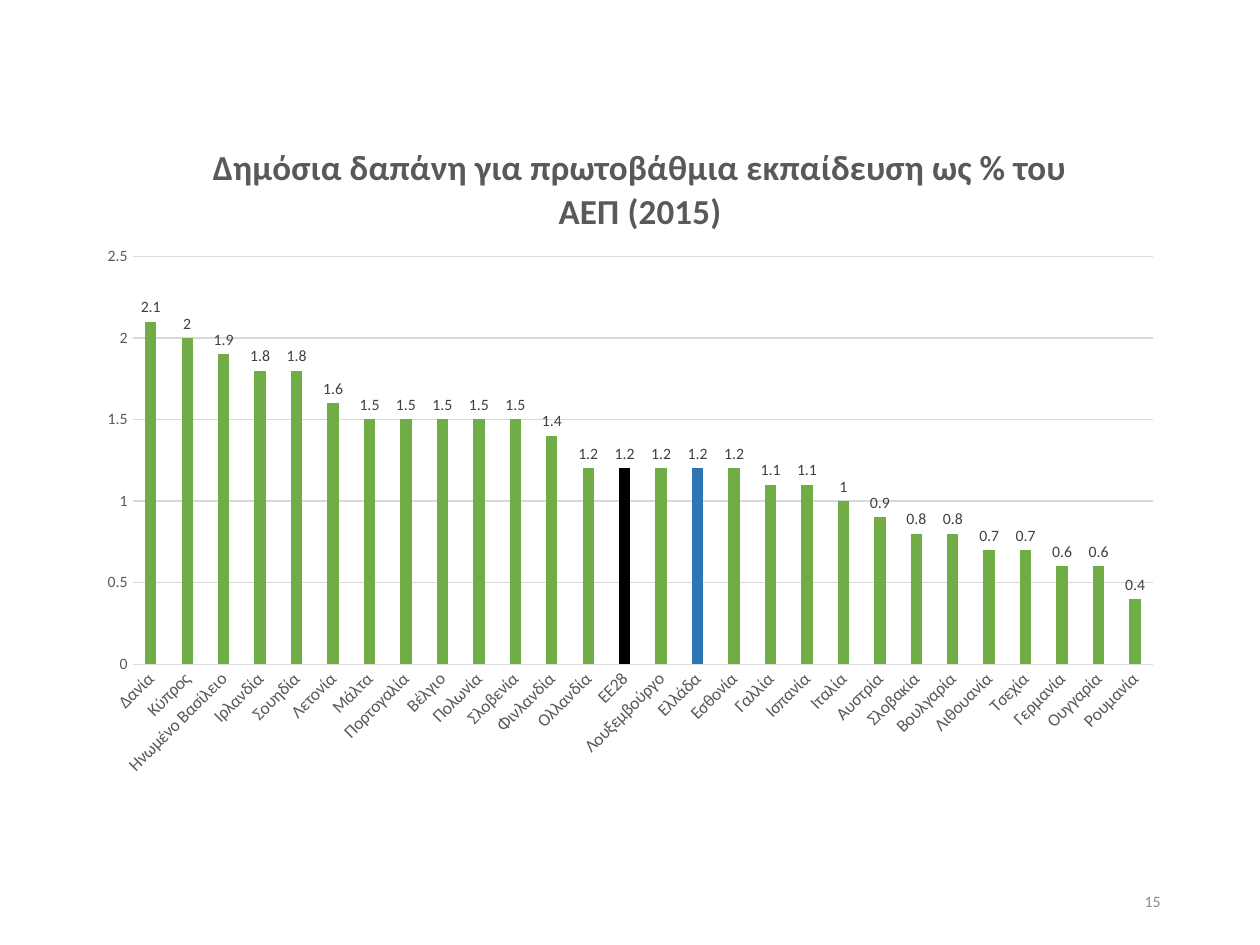
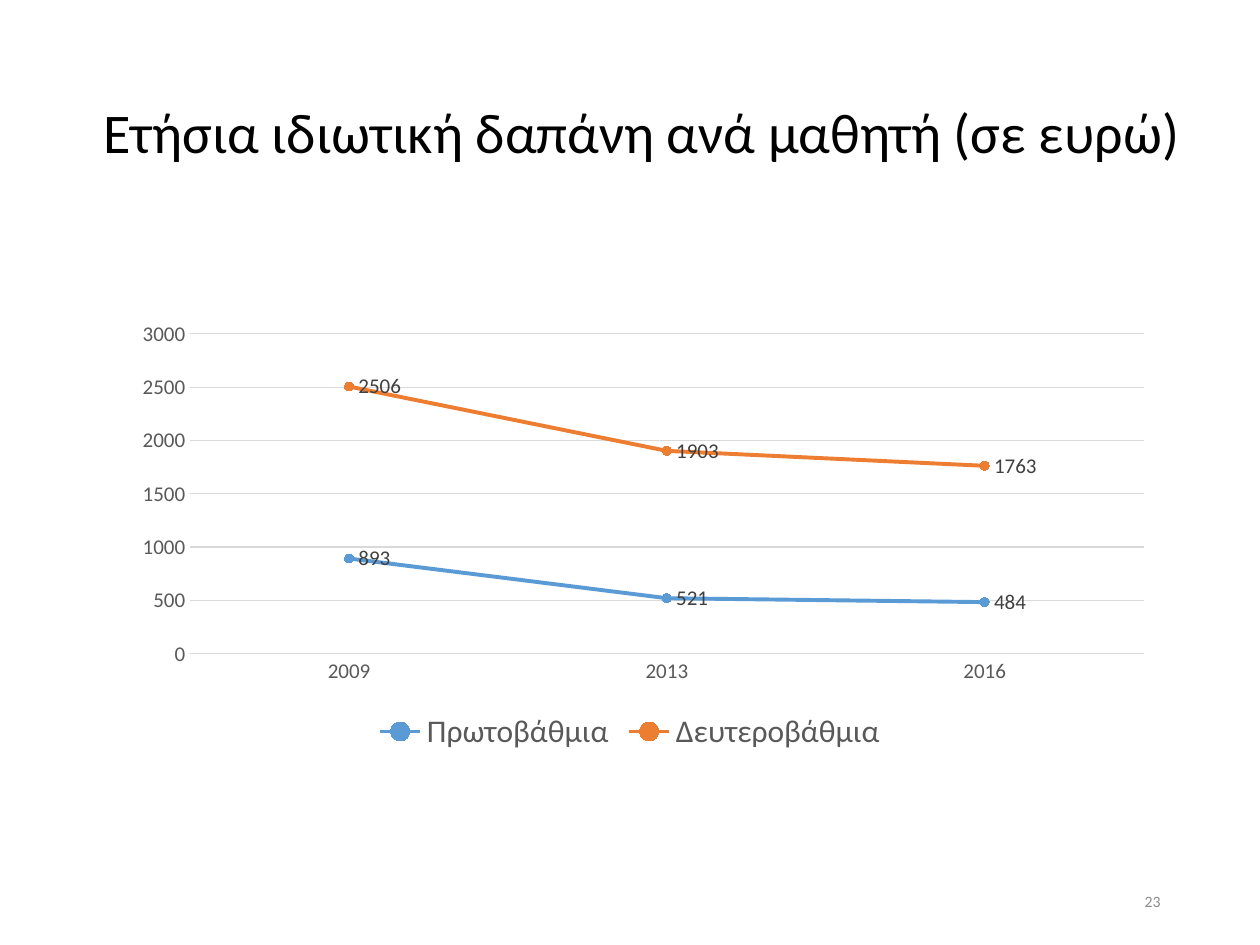
from pptx import Presentation
from pptx.chart.data import CategoryChartData
from pptx.dml.color import RGBColor
from pptx.enum.chart import (XL_CHART_TYPE, XL_LABEL_POSITION, XL_LEGEND_POSITION,
                             XL_MARKER_STYLE, XL_TICK_MARK)
from pptx.enum.text import MSO_ANCHOR, PP_ALIGN
from pptx.oxml import parse_xml
from pptx.oxml.ns import nsdecls
from pptx.util import Pt

COLUMNS = XL_CHART_TYPE.COLUMN_CLUSTERED
LINES = XL_CHART_TYPE.LINE_MARKERS
LABEL_ABOVE = XL_LABEL_POSITION.OUTSIDE_END
LABEL_RIGHT = XL_LABEL_POSITION.RIGHT
LEGEND_BOTTOM = XL_LEGEND_POSITION.BOTTOM
CIRCLE = XL_MARKER_STYLE.CIRCLE
NO_TICK = XL_TICK_MARK.NONE
MIDDLE = MSO_ANCHOR.MIDDLE
CENTER, RIGHT = PP_ALIGN.CENTER, PP_ALIGN.RIGHT

FONT = "Calibri"
BLACK = RGBColor(0x00, 0x00, 0x00)
LABEL_GRAY = RGBColor(0x40, 0x40, 0x40)
AXIS_GRAY = RGBColor(0x59, 0x59, 0x59)
NUMBER_GRAY = RGBColor(0x8C, 0x8C, 0x8C)
GRID_GRAY = RGBColor(0xD9, 0xD9, 0xD9)
GREEN = RGBColor(0x70, 0xAD, 0x47)
GREECE_BLUE = RGBColor(0x2E, 0x75, 0xB6)
BLUE = RGBColor(0x5B, 0x9B, 0xD5)
ORANGE = RGBColor(0xED, 0x7D, 0x31)

PX_PER_INCH = 126
EMU_PER_PX = 914400 / PX_PER_INCH

# Boxes: left, top, width, height in px
SPENDING_BOX = (87, 116, 1086, 672)
TITLE_BOX = (87, 50, 1110, 170)
PUPIL_BOX = (87, 273, 1086, 484)
NUMBER_BOX = (890, 876, 283, 50)

SPENDING = {
    "Δανία": 2.1, "Κύπρος": 2, "Ηνωμένο Βασίλειο": 1.9, "Ιρλανδία": 1.8,
    "Σουηδία": 1.8, "Λετονία": 1.6, "Μάλτα": 1.5, "Πορτογαλία": 1.5,
    "Βέλγιο": 1.5, "Πολωνία": 1.5, "Σλοβενία": 1.5, "Φινλανδία": 1.4,
    "Ολλανδία": 1.2, "EE28": 1.2, "Λουξεμβούργο": 1.2, "Ελλάδα": 1.2,
    "Εσθονία": 1.2, "Γαλλία": 1.1, "Ισπανία": 1.1, "Ιταλία": 1,
    "Αυστρία": 0.9, "Σλοβακία": 0.8, "Βουλγαρία": 0.8, "Λιθουανία": 0.7,
    "Τσεχία": 0.7, "Γερμανία": 0.6, "Ουγγαρία": 0.6, "Ρουμανία": 0.4,
}
HIGHLIGHTS = {"EE28": BLACK, "Ελλάδα": GREECE_BLUE}
YEARS = ["2009", "2013", "2016"]
PUPIL_COSTS = {"Πρωτοβάθμια": [893, 521, 484], "Δευτεροβάθμια": [2506, 1903, 1763]}


def emu(*lengths):
    return [round(length * EMU_PER_PX) for length in lengths]


def style_font(font, size, color, bold=False):
    font.name, font.size, font.bold = FONT, Pt(size), bold
    font.color.rgb = color


def add_text(slide, box, text, size, color, align, line_spacing=1.0):
    frame = slide.shapes.add_textbox(*emu(*box)).text_frame
    frame.word_wrap = True
    frame.vertical_anchor = MIDDLE
    paragraph = frame.paragraphs[0]
    paragraph.alignment = align
    paragraph.line_spacing = line_spacing
    run = paragraph.add_run()
    run.text = text
    style_font(run.font, size, color)


def set_layout(parent, index, x, y, size=None):
    """Place a chart part by fractions of the chart area."""
    for old_layout in parent.xpath("c:layout"):
        parent.remove(old_layout)
    values = [("xMode", "edge"), ("yMode", "edge"), ("x", x), ("y", y)]
    if size:
        values.insert(0, ("layoutTarget", "inner"))
        values += zip("wh", size)
    parts = "".join(f'<c:{name} val="{value}"/>' for name, value in values)
    parent.insert(index, parse_xml(
        f'<c:layout {nsdecls("c")}><c:manualLayout>{parts}</c:manualLayout></c:layout>'))


def style_axes(chart, category_size, value_size, maximum, step):
    for axis, size in ((chart.category_axis, category_size), (chart.value_axis, value_size)):
        axis.major_tick_mark = axis.minor_tick_mark = NO_TICK
        style_font(axis.tick_labels.font, size, AXIS_GRAY)
    value_axis = chart.value_axis
    value_axis.minimum_scale, value_axis.maximum_scale = 0, maximum
    value_axis.major_unit = step
    value_axis.format.line.fill.background()
    value_axis.has_major_gridlines = True
    for line in (chart.category_axis.format.line, value_axis.major_gridlines.format.line):
        line.color.rgb = GRID_GRAY
        line.width = Pt(0.75)


def add_chart(slide, box, kind, categories, series_values, plot_area, size):
    data = CategoryChartData()
    data.categories = categories
    for name, values in series_values.items():
        data.add_series(name, values)
    chart = slide.shapes.add_chart(kind, *emu(*box), data).chart
    style_font(chart.font, size, BLACK)
    chart.has_title = chart.has_legend = False
    chart.plots[0].vary_by_categories = False
    set_layout(chart.element.xpath("c:chart/c:plotArea")[0], 0, *plot_area)
    return chart


def add_value_labels(series, size, position):
    labels = series.data_labels
    labels.show_value = True
    labels.position = position
    style_font(labels.font, size, LABEL_GRAY)


def add_spending_chart(slide, box):
    chart = add_chart(slide, box, COLUMNS, list(SPENDING), {"Series 1": SPENDING.values()},
                      (0.042, 0.209, (0.94, 0.607)), size=10)
    style_axes(chart, 10, 9, maximum=2.5, step=0.5)
    # Slanted country names
    chart.element.xpath("c:chart/c:plotArea/c:catAx/c:txPr/a:bodyPr")[0].set("rot", "-2700000")

    # Chart title
    chart.has_title = True
    run = chart.chart_title.text_frame.paragraphs[0].add_run()
    run.text = "Δημόσια δαπάνη για πρωτοβάθμια εκπαίδευση ως % του ΑΕΠ (2015)"
    style_font(run.font, 20, AXIS_GRAY, bold=True)
    set_layout(chart.chart_title.element, 1, 0.11, 0.03)

    # Columns, with the EU average and Greece picked out
    plot = chart.plots[0]
    plot.gap_width, plot.overlap = 219, -27
    series = plot.series[0]
    series.format.fill.solid()
    series.format.fill.fore_color.rgb = GREEN
    for index, country in enumerate(SPENDING):
        if country in HIGHLIGHTS:
            fill = series.points[index].format.fill
            fill.solid()
            fill.fore_color.rgb = HIGHLIGHTS[country]
    add_value_labels(series, 9, LABEL_ABOVE)


def add_pupil_chart(slide, box):
    chart = add_chart(slide, box, LINES, YEARS, PUPIL_COSTS,
                      (0.095, 0.126, (0.878, 0.661)), size=12)
    style_axes(chart, 12, 12, maximum=3000, step=500)

    # Legend
    chart.has_legend = True
    chart.legend.position = LEGEND_BOTTOM
    chart.legend.include_in_layout = False
    style_font(chart.legend.font, 18, AXIS_GRAY)

    # One line per level of education
    for series, color in zip(chart.plots[0].series, (BLUE, ORANGE)):
        series.smooth = False
        series.format.line.color.rgb = color
        series.format.line.width = Pt(2.25)
        marker = series.marker
        marker.style, marker.size = CIRCLE, 5
        marker.format.fill.solid()
        marker.format.fill.fore_color.rgb = color
        marker.format.line.color.rgb = color
        add_value_labels(series, 12, LABEL_RIGHT)


def add_slide(presentation, number):
    slide = presentation.slides.add_slide(presentation.slide_layouts[6])
    add_text(slide, NUMBER_BOX, str(number), size=9, color=NUMBER_GRAY, align=RIGHT)
    return slide


def main():
    presentation = Presentation()
    presentation.slide_width, presentation.slide_height = emu(1260, 945)

    # Public spending by country
    add_spending_chart(add_slide(presentation, 15), SPENDING_BOX)

    # Private spending per pupil
    slide = add_slide(presentation, 23)
    add_text(slide, TITLE_BOX, "Ετήσια ιδιωτική δαπάνη ανά μαθητή (σε ευρώ)",
             size=32, color=BLACK, align=CENTER, line_spacing=0.9)
    add_pupil_chart(slide, PUPIL_BOX)

    presentation.save("out.pptx")


if __name__ == "__main__":
    main()
